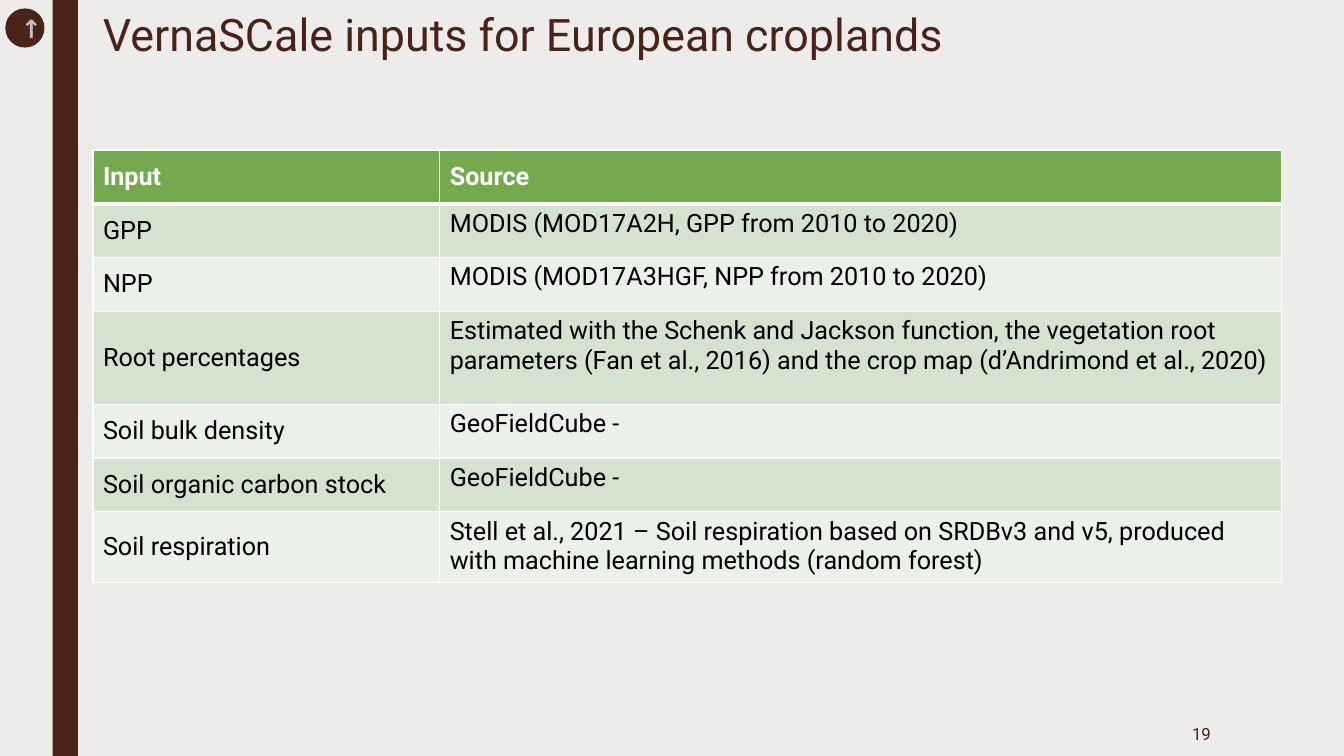
from lxml import etree
from pptx import Presentation
from pptx.dml.color import RGBColor
from pptx.enum.shapes import MSO_SHAPE
from pptx.enum.text import MSO_ANCHOR, PP_ALIGN
from pptx.oxml.ns import qn
from pptx.util import Pt

RECTANGLE, OVAL = MSO_SHAPE.RECTANGLE, MSO_SHAPE.OVAL
TOP, MIDDLE = MSO_ANCHOR.TOP, MSO_ANCHOR.MIDDLE
LEFT, CENTER, RIGHT = PP_ALIGN.LEFT, PP_ALIGN.CENTER, PP_ALIGN.RIGHT

PAGE_GREY = RGBColor(0xED, 0xEC, 0xEB)
BROWN = RGBColor(0x4A, 0x23, 0x18)
SILVER = RGBColor(0xBF, 0xBF, 0xBF)
GREEN = RGBColor(0x74, 0xA9, 0x4E)
BANDS = (RGBColor(0xEB, 0xF1, 0xE9), RGBColor(0xD6, 0xE2, 0xD0))
WHITE = RGBColor(0xFF, 0xFF, 0xFF)
BLACK = RGBColor(0x00, 0x00, 0x00)

TITLE = "VernaSCale inputs for European croplands"
COLUMN_WIDTHS = (247.7, 601.2)
ROW_HEIGHT, TALL_ROW_HEIGHT, TALL_ROW = 38.4, 66.4, 3
INPUTS = (
    ("Input", "Source"),
    ("GPP", "MODIS (MOD17A2H, GPP from 2010 to 2020)"),
    ("NPP", "MODIS (MOD17A3HGF, NPP from 2010 to 2020)"),
    ("Root percentages",
     "Estimated with the Schenk and Jackson function, the vegetation root "
     "parameters (Fan et al., 2016) and the crop map (d’Andrimond et al., 2020)"),
    ("Soil bulk density", "GeoFieldCube -"),
    ("Soil organic carbon stock", "GeoFieldCube -"),
    ("Soil respiration",
     "Stell et al., 2021 – Soil respiration based on SRDBv3 and v5, produced "
     "with machine learning methods (random forest)"),
)


def write(frame, text, size, color, bold=False, align=LEFT, anchor=TOP, spacing=1.0):
    frame.word_wrap = True
    frame.vertical_anchor = anchor
    para = frame.paragraphs[0]
    para.alignment = align
    para.line_spacing = spacing
    span = para.add_run()
    span.text = text
    span.font.color.rgb = color
    for name, value in {"name": "Roboto", "size": Pt(size), "bold": bold}.items():
        setattr(span.font, name, value)


def add_text(page, box, text, size, **layout):
    frame = page.shapes.add_textbox(*map(Pt, box)).text_frame
    write(frame, text, size, BROWN, **layout)


def add_brown_shape(page, kind, box):
    shape = page.shapes.add_shape(kind, *map(Pt, box))
    shape.shadow.inherit = False
    shape.fill.solid()
    shape.fill.fore_color.rgb = BROWN
    shape.line.fill.background()
    return shape


def add_sidebar(page, box):
    left, top, width, height = box
    bar_left = 37.6
    add_brown_shape(page, RECTANGLE, (left + bar_left, top, width - bar_left, height))
    button = add_brown_shape(page, OVAL, (left + 3.8, top + 6, 28, 28))
    write(button.text_frame, "↑", 18, SILVER, bold=True, align=CENTER, anchor=MIDDLE)


def add_borders(cell, widths):
    properties = cell._tc.get_or_add_tcPr()
    for side, width in widths.items():
        border = etree.SubElement(properties, qn("a:ln" + side), w=str(Pt(width)))
        fill = etree.SubElement(border, qn("a:solidFill"))
        etree.SubElement(fill, qn("a:srgbClr"), val=str(WHITE))


def add_input_table(page, box):
    shape = page.shapes.add_table(len(INPUTS), len(COLUMN_WIDTHS), *map(Pt, box))
    table = shape.table
    for column, width in zip(table.columns, COLUMN_WIDTHS):
        column.width = Pt(width)
    for row_index, texts in enumerate(INPUTS):
        header = row_index == 0
        height = TALL_ROW_HEIGHT if row_index == TALL_ROW else ROW_HEIGHT
        table.rows[row_index].height = Pt(height)
        for column_index, text in enumerate(texts):
            cell = table.cell(row_index, column_index)
            add_borders(cell, {"L": 1, "R": 1, "T": 3 if row_index == 1 else 1,
                               "B": 3 if header else 1})
            cell.fill.solid()
            cell.fill.fore_color.rgb = GREEN if header else BANDS[row_index % 2]
            write(cell.text_frame, text, 18, WHITE if header else BLACK, bold=header)
            cell.vertical_anchor = MIDDLE if header or column_index == 0 else TOP


def build_inputs_page(deck):
    page = deck.slides.add_slide(deck.slide_layouts[6])
    page.background.fill.solid()
    page.background.fill.fore_color.rgb = PAGE_GREY
    add_sidebar(page, (0, 0, 55.7, 540))
    add_text(page, (66.4, 5.8, 756, 116.6), TITLE, 32, spacing=0.89)
    add_input_table(page, (66.4, 107.2, sum(COLUMN_WIDTHS), 296.8))
    add_text(page, (746, 508.3, 126, 31.7), "19", 12, align=RIGHT, anchor=MIDDLE)


def main():
    deck = Presentation()
    deck.slide_width, deck.slide_height = Pt(960), Pt(540)
    build_inputs_page(deck)
    deck.save("out.pptx")


if __name__ == "__main__":
    main()
